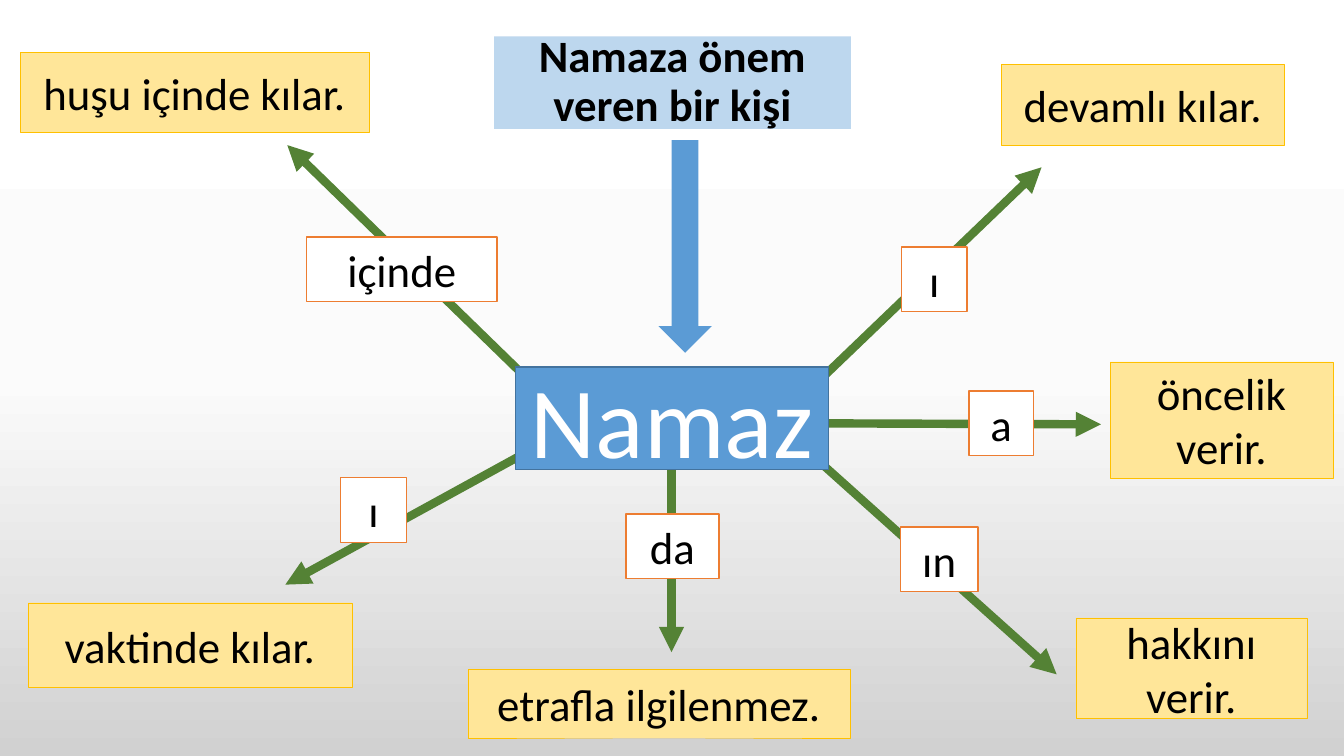
from copy import deepcopy
from dataclasses import dataclass

from lxml.etree import SubElement
from pptx import Presentation
from pptx.dml.color import RGBColor
from pptx.enum.shapes import MSO_CONNECTOR, MSO_SHAPE
from pptx.enum.text import MSO_ANCHOR, MSO_AUTO_SIZE, PP_ALIGN
from pptx.oxml.ns import qn
from pptx.util import Inches, Pt

BLACK = RGBColor(0x00, 0x00, 0x00)
WHITE = RGBColor(0xFF, 0xFF, 0xFF)
BLUE = RGBColor(0x5B, 0x9B, 0xD5)
DARK_BLUE = RGBColor(0x43, 0x73, 0x9E)
PALE_BLUE = RGBColor(0xBD, 0xD7, 0xEE)
PALE_GOLD = RGBColor(0xFF, 0xE6, 0x99)
GOLD = RGBColor(0xFF, 0xC0, 0x00)
ORANGE = RGBColor(0xED, 0x7D, 0x31)
GREEN = RGBColor(0x54, 0x82, 0x35)
BACKDROP = [(0, WHITE), (0.5, RGBColor(0xFB, 0xFB, 0xFB)), (1, RGBColor(0xD1, 0xD1, 0xD1))]
FONT = "Calibri"
SUFFIX_HEIGHT = 0.64

Box = tuple[float, float, float, float]
Point = tuple[float, float]


@dataclass(frozen=True)
class Branch:
    """An arrow from the hub, the suffix on it and the phrase it leads to."""
    start: Point
    end: Point
    suffix: str
    suffix_at: Point
    suffix_width: float
    phrase: str
    phrase_box: Box


BRANCHES = [
    Branch((5.16, 3.69), (2.85, 1.44), "içinde", (3.04, 2.35), 1.89,
           "huşu içinde kılar.", (0.2, 0.52, 3.46, 0.79)),
    Branch((5.18, 4.51), (2.83, 5.8), "ı", (3.38, 4.74), 0.65,
           "vaktinde kılar.", (0.28, 5.98, 3.21, 0.84)),
    Branch((6.66, 4.59), (6.66, 6.47), "da", (6.21, 5.1), 0.92,
           "etrafla ilgilenmez.", (4.64, 6.64, 3.79, 0.68)),
    Branch((8.16, 4.61), (10.48, 6.69), "ın", (8.93, 5.23), 0.77,
           "hakkını verir.", (10.67, 6.13, 2.29, 1)),
    Branch((8.2, 4.2), (10.92, 4.21), "a", (9.61, 3.88), 0.64,
           "öncelik verir.", (11.01, 3.59, 2.21, 1.15)),
    Branch((8.1, 3.8), (10.33, 1.66), "ı", (8.94, 2.45), 0.65,
           "devamlı kılar.", (9.93, 0.64, 2.81, 0.8)),
]


def write(sp, text: str, *, size: float = 32, color: RGBColor = BLACK,
          bold: bool = False, spacing: float | None = None) -> None:
    tf = sp.text_frame
    tf.word_wrap = True
    tf.auto_size = MSO_AUTO_SIZE.NONE
    tf.vertical_anchor = MSO_ANCHOR.MIDDLE
    p = tf.paragraphs[0]
    p.alignment = PP_ALIGN.CENTER
    p.line_spacing = spacing
    r = p.add_run()
    r.text = text
    r.font.name = FONT
    r.font.size = Pt(size)
    r.font.bold = bold
    r.font.color.rgb = color


def add_box(slide, box: Box, fill: RGBColor, line: RGBColor | None = None,
            width: float = 1, kind: MSO_SHAPE = MSO_SHAPE.RECTANGLE):
    sp = slide.shapes.add_shape(kind, *map(Inches, box))
    sp.shadow.inherit = False
    sp.fill.solid()
    sp.fill.fore_color.rgb = fill
    if line is None:
        sp.line.fill.background()
    else:
        sp.line.color.rgb = line
        sp.line.width = Pt(width)
    return sp


def add_arrow(slide, start: Point, end: Point) -> None:
    arrow = slide.shapes.add_connector(MSO_CONNECTOR.STRAIGHT, *map(Inches, start + end))
    arrow.line.color.rgb = GREEN
    arrow.line.width = Pt(6)
    SubElement(arrow.line._get_or_add_ln(), qn("a:tailEnd"), type="triangle")
    SubElement(arrow.element.spPr, qn("a:effectLst"))


def add_branch(slide, branch: Branch) -> None:
    add_arrow(slide, branch.start, branch.end)
    suffix_box = (*branch.suffix_at, branch.suffix_width, SUFFIX_HEIGHT)
    write(add_box(slide, suffix_box, WHITE, ORANGE), branch.suffix)
    write(add_box(slide, branch.phrase_box, PALE_GOLD, GOLD, 0.25), branch.phrase)


def paint_background(slide) -> None:
    fill = slide.background.fill
    fill.gradient()
    fill.gradient_angle = 270
    stop_list = next(slide.element.iter(qn("a:gsLst")))
    stop_list.append(deepcopy(stop_list[-1]))
    for stop, (position, color) in zip(fill.gradient_stops, BACKDROP):
        stop.position = position
        stop.color.rgb = color


def add_title(slide) -> None:
    title = slide.shapes.title
    title.left, title.top, title.width, title.height = map(Inches, (4.9, 0.36, 3.54, 0.92))
    title.fill.solid()
    title.fill.fore_color.rgb = PALE_BLUE
    write(title, "Namaza önem veren bir kişi", bold=True, spacing=0.9)


def main() -> None:
    prs = Presentation()
    prs.slide_width, prs.slide_height = Inches(13.33), Inches(7.5)
    slide = prs.slides.add_slide(prs.slide_layouts[5])
    paint_background(slide)
    add_title(slide)
    add_box(slide, (6.53, 1.39, 0.53, 2.11), BLUE, kind=MSO_SHAPE.DOWN_ARROW)
    for branch in BRANCHES:
        add_branch(slide, branch)
    hub = add_box(slide, (5.11, 3.64, 3.11, 1.02), BLUE, DARK_BLUE)
    write(hub, "Namaz", size=72, color=WHITE)
    prs.save("out.pptx")


if __name__ == "__main__":
    main()
